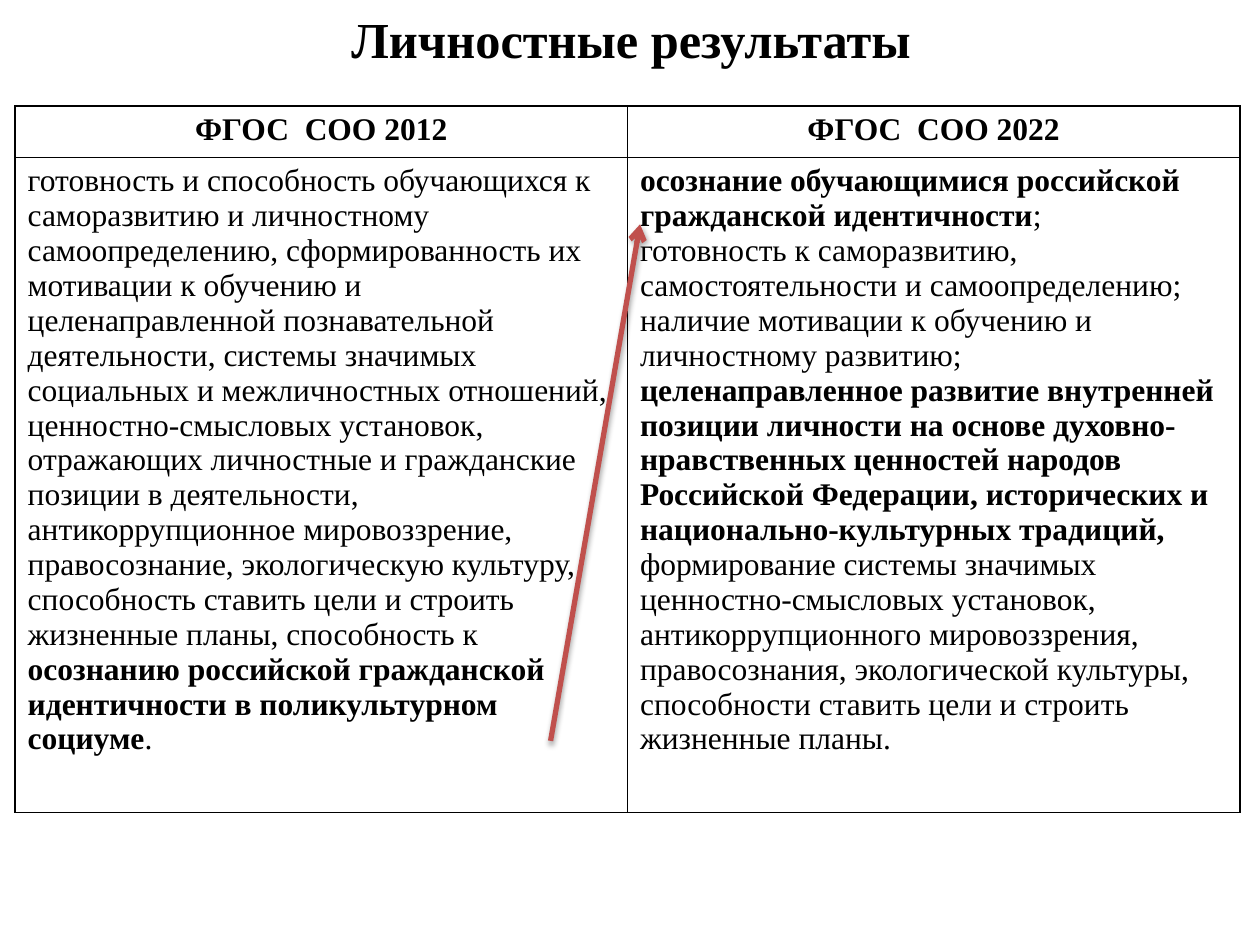
from lxml import etree
from pptx import Presentation
from pptx import util as u
from pptx.dml.color import RGBColor
from pptx.enum import shapes, text
from pptx.oxml.ns import qn

# Content: each cell is a list of (text, bold) runs
TITLE = "Личностные результаты"
HEADERS = ["ФГОС  СОО 2012", "ФГОС  СОО 2022"]
STANDARDS = [
    [
        ("готовность и способность обучающихся к саморазвитию и личностному "
         "самоопределению, сформированность их мотивации к обучению и "
         "целенаправленной познавательной деятельности, системы значимых "
         "социальных и межличностных отношений, ценностно-смысловых установок, "
         "отражающих личностные и гражданские позиции в деятельности, "
         "антикоррупционное мировоззрение, правосознание, экологическую культуру, "
         "способность ставить цели и строить жизненные планы, способность к ", False),
        ("осознанию российской гражданской идентичности в поликультурном социуме", True),
        (".", False),
    ],
    [
        ("осознание обучающимися российской\nгражданской идентичности", True),
        (";\nготовность к саморазвитию, самостоятельности и самоопределению;\n"
         "наличие мотивации к обучению и личностному развитию;\n", False),
        ("целенаправленное развитие внутренней позиции личности на основе "
         "духовно-нравственных ценностей народов Российской Федерации, "
         "исторических и национально-культурных традиций, ", True),
        ("формирование системы значимых ценностно-смысловых установок, "
         "антикоррупционного мировоззрения, правосознания, экологической культуры, "
         "способности ставить цели и строить жизненные планы.", False),
    ],
]

# Layout and formats
TITLE_BOX = (0.51, 0, 9, 0.61)
TABLE_LEFT, TABLE_TOP, TABLE_WIDTH = 0.12, 0.84, 9.72
ROW_HEIGHTS = [0.41, 4.8]
ARROW = (4.37, 5.88, 5.08, 1.78)
INK, ACCENT = "000000", "C0504D"
FONT = "Times New Roman"


def color(value):
    return RGBColor.from_string(value)


def inches(values):
    return [u.Inches(value) for value in values]


def write(paragraph, runs, size, alignment):
    paragraph.alignment = alignment
    for content, bold in runs:
        for index, line in enumerate(content.split("\n")):
            if index:
                paragraph.add_line_break()
            if line:
                run = paragraph.add_run()
                run.text = line
                formats = {"name": FONT, "size": u.Pt(size), "bold": bold}
                for name, value in formats.items():
                    setattr(run.font, name, value)
                run.font.color.rgb = color(INK)


def add_element(parent, tag, **attributes):
    return etree.SubElement(parent, qn(tag), {k: str(v) for k, v in attributes.items()})


def add_borders(cell):
    properties = cell._tc.get_or_add_tcPr()
    for side in "LRTB":
        line = add_element(properties, f"a:ln{side}", w=u.Pt(1))
        add_element(add_element(line, "a:solidFill"), "a:srgbClr", val=INK)


presentation = Presentation()
presentation.slide_width, presentation.slide_height = inches((10, 7.5))
slide = presentation.slides.add_slide(presentation.slide_layouts[6])

# Title
title = slide.shapes.add_textbox(*inches(TITLE_BOX))
frame = title.text_frame
frame.word_wrap = True
frame.vertical_anchor = text.MSO_ANCHOR.MIDDLE
write(frame.paragraphs[0], [(TITLE, True)], 28.8, text.PP_ALIGN.CENTER)

# Comparison table
table = slide.shapes.add_table(
    len(ROW_HEIGHTS), len(HEADERS),
    *inches((TABLE_LEFT, TABLE_TOP, TABLE_WIDTH, sum(ROW_HEIGHTS)))).table
table.first_row = table.horz_banding = False
for row, height in zip(table.rows, ROW_HEIGHTS):
    row.height = u.Inches(height)
rows = [
    ([[(header, True)] for header in HEADERS], text.PP_ALIGN.CENTER),
    (STANDARDS, text.PP_ALIGN.LEFT),
]
for row, (contents, alignment) in zip(table.rows, rows):
    for cell, runs in zip(row.cells, contents):
        add_borders(cell)
        cell.fill.background()
        write(cell.text_frame.paragraphs[0], runs, 18, alignment)

# Arrow linking the matching statements
arrow = slide.shapes.add_connector(shapes.MSO_CONNECTOR.STRAIGHT, *inches(ARROW))
arrow.line.color.rgb = color(ACCENT)
arrow.line.width = u.Pt(3)
add_element(arrow.line._get_or_add_ln(), "a:tailEnd", type="arrow")
effects = add_element(arrow._element.spPr, "a:effectLst")
shadow = add_element(effects, "a:outerShdw", blurRad=u.Pt(3.1), dist=u.Pt(1.8),
                     dir=90 * 60000, rotWithShape=0)
shadow_color = add_element(shadow, "a:srgbClr", val=INK)
add_element(shadow_color, "a:alpha", val=35000)

presentation.save("out.pptx")
